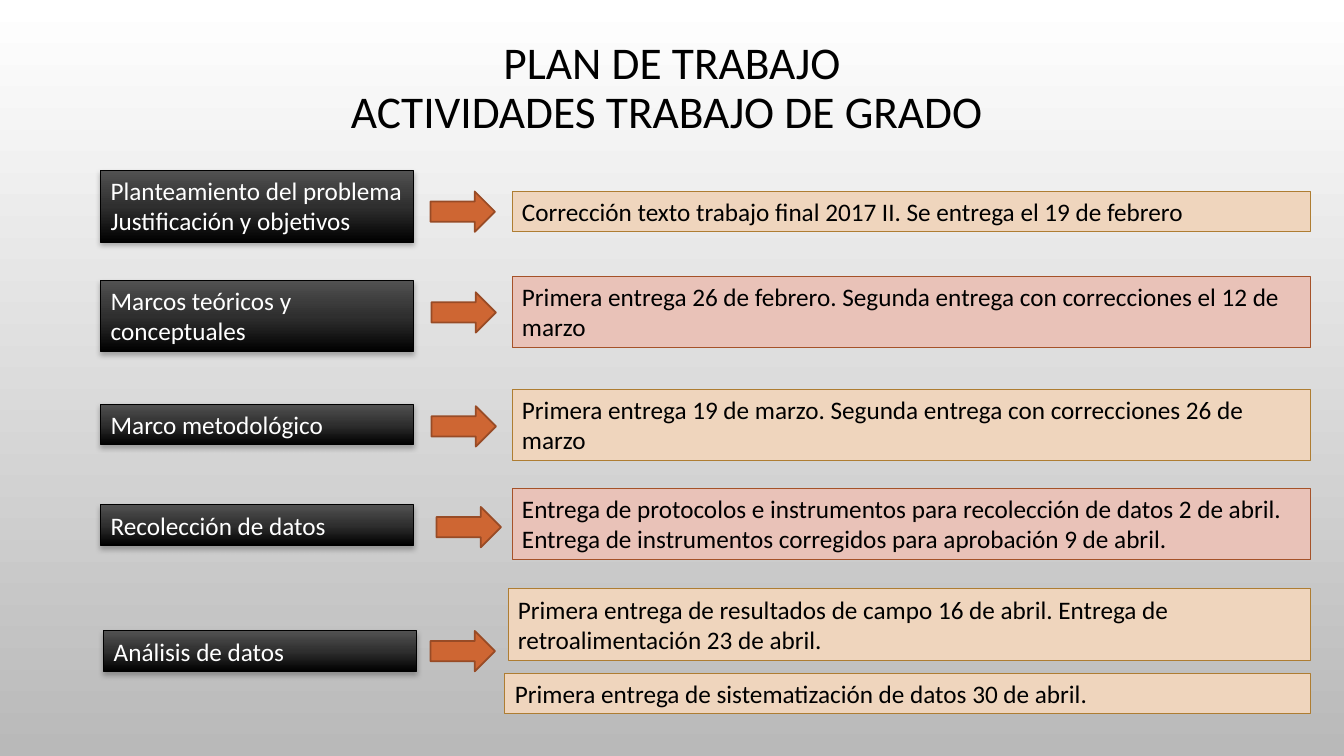
from copy import deepcopy

from lxml import etree
from pptx import Presentation
from pptx.dml.color import RGBColor
from pptx.enum.shapes import MSO_SHAPE as SHAPE
from pptx.enum.text import MSO_ANCHOR as ANCHOR, MSO_AUTO_SIZE as AUTO, PP_ALIGN as ALIGN
from pptx.oxml.ns import qn
from pptx.util import Inches, Pt

BLACK = RGBColor(0x00, 0x00, 0x00)
WHITE = RGBColor(0xFF, 0xFF, 0xFF)
GREY = RGBColor(0xB9, 0xB9, 0xB9)
CHARCOAL = RGBColor(0x51, 0x51, 0x51)
DARK = RGBColor(0x2F, 0x2F, 0x2F)
SAND = RGBColor(0xEF, 0xD5, 0xBD)
SAND_LINE = RGBColor(0xAE, 0x7D, 0x32)
ROSE = RGBColor(0xE9, 0xC2, 0xB8)
ROSE_LINE = RGBColor(0xA5, 0x52, 0x29)
ORANGE = RGBColor(0xCE, 0x66, 0x33)
ORANGE_LINE = RGBColor(0x98, 0x4B, 0x26)

# Grid of 40 columns by 22.5 rows, with square cells
COLS, ROWS = 40, 22.5
CELL = Inches(13.33) / COLS
RIGHT_EDGE = 39
ONE_LINE, TWO_LINES = 1.2, 2.13  # box heights in rows

# Label, its lines, left column, middle row; then the arrow's left column and middle row
STAGES = [
    (["Planteamiento del problema", "Justificación y objetivos"], TWO_LINES, 3, 6.14, 12.81, 6.3),
    (["Marcos teóricos y conceptuales"], TWO_LINES, 3, 9.41, 12.84, 9.3),
    (["Marco metodológico"], ONE_LINE, 3, 12.63, 12.84, 12.69),
    (["Recolección de datos"], ONE_LINE, 3, 15.63, 12.99, 15.69),
    (["Análisis de datos"], ONE_LINE, 3.09, 19.38, 12.81, 19.38),
]
SAND_STYLE, ROSE_STYLE = (SAND, SAND_LINE), (ROSE, ROSE_LINE)
# Text, its lines, left column, middle row, style
DELIVERIES = [
    ("Corrección texto trabajo final 2017 II. Se entrega el 19 de febrero",
     ONE_LINE, 15.24, 6.3, SAND_STYLE),
    ("Primera entrega 26 de febrero. Segunda entrega con correcciones el 12 de marzo",
     TWO_LINES, 15.24, 9.29, ROSE_STYLE),
    ("Primera entrega 19 de marzo. Segunda entrega con correcciones 26 de marzo",
     TWO_LINES, 15.24, 12.65, SAND_STYLE),
    ("Entrega de protocolos e instrumentos para recolección de datos 2 de abril. "
     "Entrega de instrumentos corregidos para aprobación 9 de abril.",
     TWO_LINES, 15.24, 15.59, ROSE_STYLE),
    ("Primera entrega de resultados de campo 16 de abril. "
     "Entrega de retroalimentación 23 de abril.",
     TWO_LINES, 15.12, 18.59, SAND_STYLE),
    ("Primera entrega de sistematización de datos 30 de abril.",
     ONE_LINE, 15.03, 20.64, SAND_STYLE),
]


def write(tf, lines, size=18, color=BLACK, align=ALIGN.LEFT, anchor=ANCHOR.TOP,
          spacing=None, same_paragraph=False, font="Calibri", auto_size=AUTO.SHAPE_TO_FIT_TEXT):
    """Fill a text frame, one paragraph or one broken line per text."""
    tf.word_wrap, tf.vertical_anchor, tf.auto_size = True, anchor, auto_size
    p = tf.paragraphs[0]
    for i, line in enumerate(lines):
        if i and same_paragraph:
            p.add_line_break()
        elif i:
            p = tf.add_paragraph()
        p.alignment, p.line_spacing = align, spacing
        r = p.add_run()
        r.text = line
        r.font.name, r.font.size, r.font.color.rgb = font, Pt(size), color


def shade(fill, *colors):
    """Evenly spaced vertical gradient, from top to bottom."""
    fill.gradient()
    fill.gradient_angle = 270
    first = fill.gradient_stops[0]._gs
    for _ in colors[2:]:
        first.addnext(deepcopy(first))
    for i, (stop, color) in enumerate(zip(fill.gradient_stops, colors)):
        stop.color.rgb = color
        stop.position = i / (len(colors) - 1)


def drop_shadow(sp):
    effects = sp._element.spPr.find(qn("a:effectLst"))
    shadow = etree.SubElement(effects, qn("a:outerShdw"), blurRad=str(Pt(4)),
                              dist=str(Pt(2)), dir="5400000", rotWithShape="0")
    color = etree.SubElement(shadow, qn("a:srgbClr"), val=str(BLACK))
    etree.SubElement(color, qn("a:alpha"), val="28000")


class PlanSlide:
    def __init__(self, prs):
        self.slide = prs.slides.add_slide(prs.slide_layouts[5])
        shade(self.slide.background.fill, WHITE, GREY)

    def title(self, lines, left, top, width, height):
        sp = self.slide.shapes.title
        sp.left, sp.top, sp.width, sp.height = (round(n * CELL) for n in (left, top, width, height))
        write(sp.text_frame, lines, size=32.4, align=ALIGN.CENTER, anchor=ANCHOR.MIDDLE,
              spacing=0.9, same_paragraph=True, auto_size=AUTO.NONE)

    def shape(self, kind, left, middle, width, height, line, line_width=0.75):
        box = (round(n * CELL) for n in (left, middle - height / 2, width, height))
        sp = self.slide.shapes.add_shape(kind, *box)
        sp.shadow.inherit = False
        sp.line.color.rgb, sp.line.width = line, Pt(line_width)
        return sp

    def label(self, lines, left, middle, height):
        sp = self.shape(SHAPE.RECTANGLE, left, middle, 9.3, height, BLACK)
        shade(sp.fill, CHARCOAL, DARK, BLACK)
        drop_shadow(sp)
        write(sp.text_frame, lines, color=WHITE)

    def delivery(self, text, left, middle, height, fill, line):
        sp = self.shape(SHAPE.RECTANGLE, left, middle, RIGHT_EDGE - left, height, line)
        sp.fill.solid()
        sp.fill.fore_color.rgb = fill
        write(sp.text_frame, [text])

    def arrow(self, left, middle):
        sp = self.shape(SHAPE.RIGHT_ARROW, left, middle, 1.92, ONE_LINE, ORANGE_LINE, 1.25)
        sp.fill.solid()
        sp.fill.fore_color.rgb = ORANGE


def main():
    prs = Presentation()
    prs.slide_width, prs.slide_height = round(COLS * CELL), round(ROWS * CELL)
    s = PlanSlide(prs)
    s.title(["PLAN DE TRABAJO", "ACTIVIDADES TRABAJO DE GRADO "], 3, 2.04, 34, 1.26)

    # Stages of the work, each with its arrow
    for lines, height, left, middle, arrow_left, arrow_middle in STAGES:
        s.label(lines, left, middle, height)
        s.arrow(arrow_left, arrow_middle)

    # What is handed in, and when
    for text, height, left, middle, style in DELIVERIES:
        s.delivery(text, left, middle, height, *style)

    prs.save("out.pptx")


if __name__ == "__main__":
    main()
